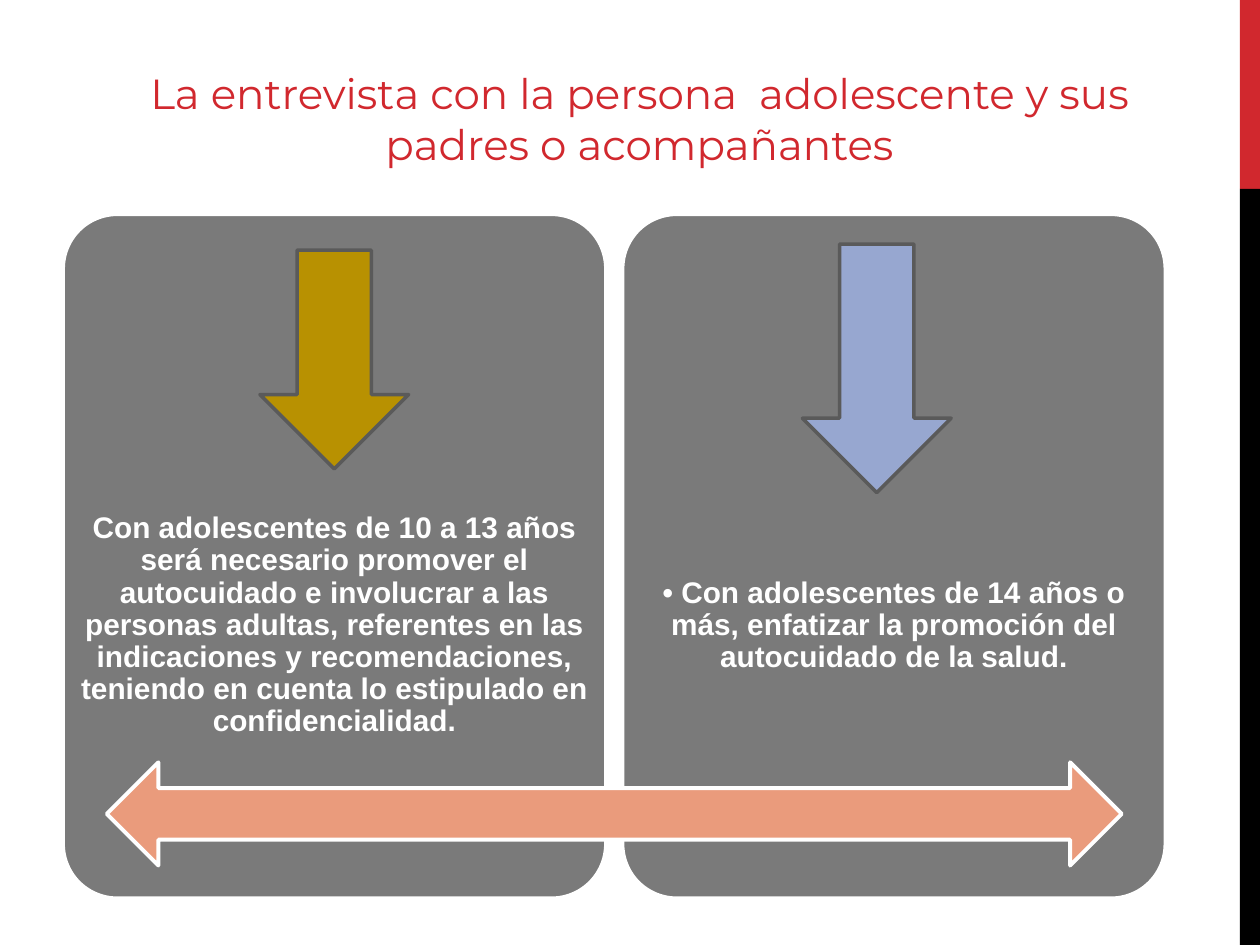
"""Builds the slide on interviewing adolescents and their parents or companions."""
from pptx import Presentation
from pptx.dml.color import RGBColor
from pptx.enum.shapes import MSO_SHAPE
from pptx.enum.text import MSO_ANCHOR, PP_ALIGN
from pptx.util import Pt

TITLE = "La entrevista con la persona  adolescente y sus padres o acompañantes"
PANELS = [
    "Con adolescentes de 10 a 13 años será necesario promover el autocuidado "
    "e involucrar a las personas adultas, referentes en las indicaciones y "
    "recomendaciones, teniendo en cuenta lo estipulado en confidencialidad.",
    "• Con adolescentes de 14 años o más, enfatizar la promoción del "
    "autocuidado de la salud.",
]
DOWN_ARROWS = [
    ((148.5, 143, 85, 125), "B89101"),
    ((458.5, 139.5, 85, 142), "97A7D0"),
]
SIDE_BARS = [((708.5, 0, 11.5, 108), "D1282E"), ((708.5, 108, 11.5, 432), "000000")]

PANEL_LEFT, PANEL_TOP, PANEL_W, PANEL_H, PANEL_GAP = 36, 122.4, 310.3, 391, 9.4
TEXT_TOP, TEXT_H = 279.4, 156.2
RED, WHITE, GREY, DARK_GREY, SALMON = "D1282E", "FFFFFF", "7A7A7A", "5A5A5A", "EA9B7C"


def color(value):
    return RGBColor.from_string(value)


def add_shape(s, kind, box, fill, line=None, width=2.25, adjustments=()):
    sp = s.shapes.add_shape(kind, *map(Pt, box))
    sp.shadow.inherit = False
    sp.fill.solid()
    sp.fill.fore_color.rgb = color(fill)
    if line:
        sp.line.color.rgb = color(line)
        sp.line.width = Pt(width)
    else:
        sp.line.fill.background()
    for i, value in enumerate(adjustments):
        sp.adjustments[i] = value


def add_text(s, box, text, font, size, fill, anchor, inset, bold=False, spacing=1.0):
    tf = s.shapes.add_textbox(*map(Pt, box)).text_frame
    tf.word_wrap = True
    tf.vertical_anchor = anchor
    tf.margin_left = tf.margin_right = Pt(inset[0])
    tf.margin_top = tf.margin_bottom = Pt(inset[1])
    tf.text = text
    p = tf.paragraphs[0]
    p.alignment = PP_ALIGN.CENTER
    p.line_spacing = spacing
    r = p.runs[0]
    r.font.name = font
    r.font.size = Pt(size)
    r.font.bold = bold
    r.font.color.rgb = color(fill)


def main():
    prs = Presentation()
    prs.slide_width, prs.slide_height = Pt(720), Pt(540)
    s = prs.slides.add_slide(prs.slide_layouts[6])

    for box, fill in SIDE_BARS:
        add_shape(s, MSO_SHAPE.RECTANGLE, box, fill)
    add_text(s, (36, 12.2, 658.8, 87.8), TITLE, "Montserrat", 24, RED,
             MSO_ANCHOR.BOTTOM, (7.2, 3.6))

    for i, text in enumerate(PANELS):
        left = PANEL_LEFT + i * (PANEL_W + PANEL_GAP)
        add_shape(s, MSO_SHAPE.ROUNDED_RECTANGLE, (left, PANEL_TOP, PANEL_W, PANEL_H),
                  GREY, WHITE, adjustments=(0.1,))
        add_text(s, (left, TEXT_TOP, PANEL_W, TEXT_H), text, "Arial", 17, WHITE,
                 MSO_ANCHOR.MIDDLE, (9.4, 9.4), bold=True, spacing=0.9)

    add_shape(s, MSO_SHAPE.LEFT_RIGHT_ARROW, (61, 435.6, 580, 59), SALMON, WHITE)
    for box, fill in DOWN_ARROWS:
        add_shape(s, MSO_SHAPE.DOWN_ARROW, box, fill, DARK_GREY, 2)

    prs.save("out.pptx")


if __name__ == "__main__":
    main()
